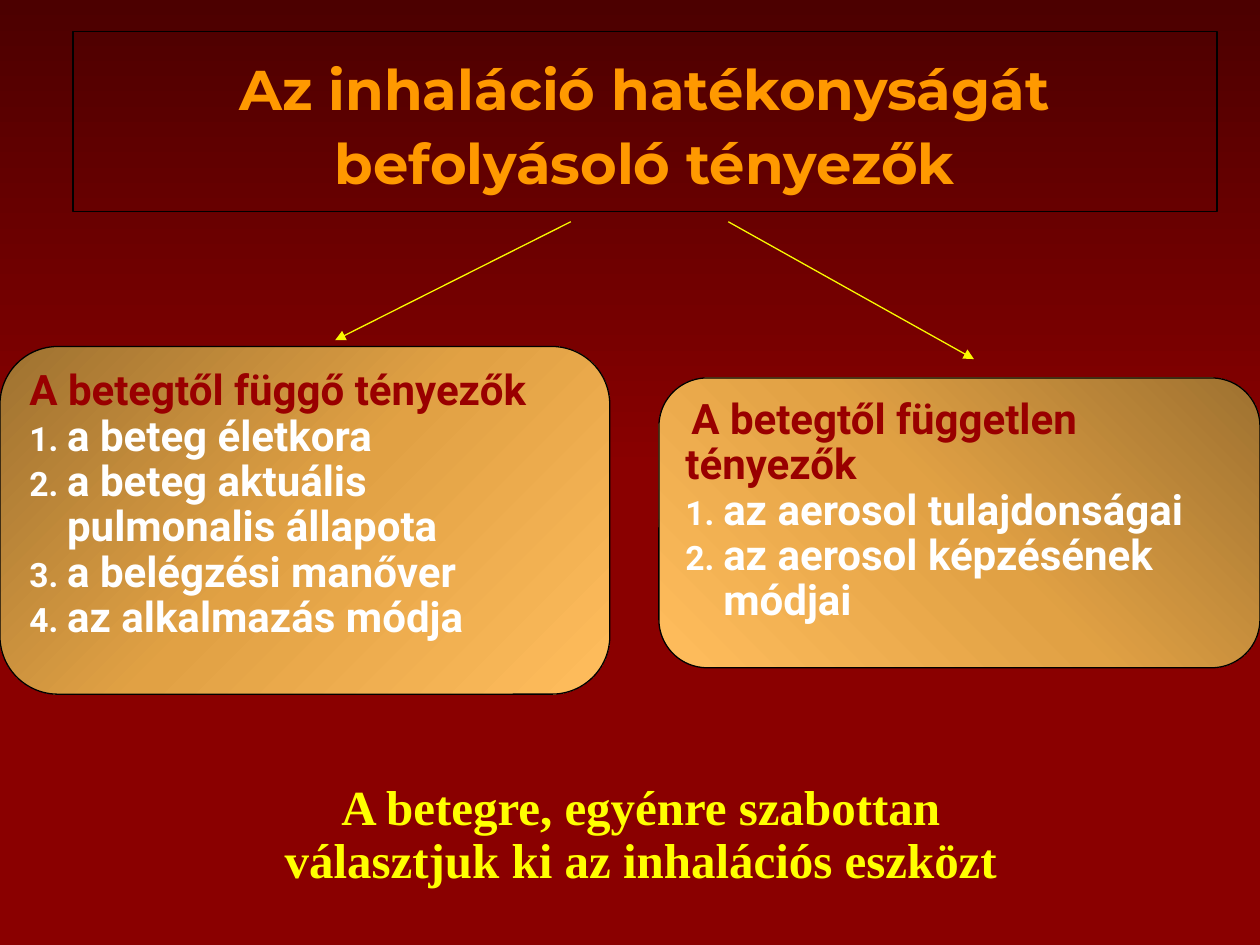
from lxml import etree
from pptx import Presentation
from pptx.dml.color import RGBColor
from pptx.enum.dml import MSO_THEME_COLOR
from pptx.enum.shapes import MSO_CONNECTOR, MSO_SHAPE
from pptx.enum.text import MSO_ANCHOR, MSO_AUTO_SIZE, PP_ALIGN
from pptx.oxml import parse_xml
from pptx.oxml.ns import nsdecls, qn
from pptx.util import Inches, Pt

CENTER, LEFT = PP_ALIGN.CENTER, PP_ALIGN.LEFT
TOP, MIDDLE = MSO_ANCHOR.TOP, MSO_ANCHOR.MIDDLE
NO_FIT, GROW = MSO_AUTO_SIZE.NONE, MSO_AUTO_SIZE.SHAPE_TO_FIT_TEXT
ROUNDED, STRAIGHT = MSO_SHAPE.ROUNDED_RECTANGLE, MSO_CONNECTOR.STRAIGHT

SLIDE_W, SLIDE_H = Inches(10), Inches(7.5)
COLS, ROWS = 100, 75
INDENT = Inches(0.3)
COLORS = {
    "title": "FF9900", "heading": "990000", "item": "FFFFFF",
    "closing": "FFFF00", "arrow": "F9F900", "outline": "000000",
}
BACKDROP = [(0, "4C0000"), (50, "8A0000"), (100, "8A0000")]
GOLD = [(0, "9E7130"), (50, "E1A144"), (100, "FFBD5D")]
DIAGONAL = '<a:lin ang="2700000" scaled="0"/>'
DOWNWARD = '<a:lin ang="5400000" scaled="0"/>'
FROM_TOP_RIGHT = '<a:path path="circle"><a:fillToRect l="100000" b="100000"/></a:path>'


def rgb(name):
    return RGBColor.from_string(COLORS[name])


def grid(col, row):
    return int(SLIDE_W * col / COLS), int(SLIDE_H * row / ROWS)


def box(col, row, cols, rows):
    return grid(col, row) + grid(cols, rows)


def set_gradient(fill, owner, stops, direction):
    fill.gradient()
    old = next(owner.iter(qn("a:gradFill")))
    marks = "".join(
        f'<a:gs pos="{pos * 1000}"><a:srgbClr val="{color}"/></a:gs>'
        for pos, color in stops)
    new = parse_xml(f'<a:gradFill {nsdecls("a")} rotWithShape="1">'
                    f'<a:gsLst>{marks}</a:gsLst>{direction}</a:gradFill>')
    old.getparent().replace(old, new)


def set_outline(s, color="outline"):
    s.line.color.rgb = rgb(color)
    s.line.width = Pt(0.75)


def set_frame(tf, anchor=TOP, fit=NO_FIT):
    tf.word_wrap = True
    tf.auto_size = fit
    tf.vertical_anchor = anchor


def write(p, text, font="Roboto", size=24, color="item", align=LEFT, spacing=0.9):
    p.alignment = align
    p.line_spacing = spacing
    r = p.add_run()
    r.text = text
    r.font.name = font
    r.font.size = Pt(size)
    r.font.bold = True
    r.font.color.rgb = rgb(color)


def number(p):
    pPr = p._p.get_or_add_pPr()
    pPr.set("marL", str(INDENT))
    pPr.set("indent", str(-INDENT))
    color = etree.SubElement(pPr, qn("a:buClr"))
    etree.SubElement(color, qn("a:srgbClr"), val=COLORS["item"])
    etree.SubElement(pPr, qn("a:buSzPct"), val="80000")
    etree.SubElement(pPr, qn("a:buAutoNum"), type="arabicPeriod")


def add_title(slide, text, place):
    s = slide.shapes.title
    s.left, s.top, s.width, s.height = box(*place)
    set_outline(s)
    set_frame(s.text_frame, MIDDLE)
    write(s.text_frame.paragraphs[0], text, font="Montserrat", size=32,
          color="title", align=CENTER, spacing=1.1)


def add_card(slide, place, direction, heading, items, lead=""):
    s = slide.shapes.add_shape(ROUNDED, *box(*place))
    s.shadow.inherit = False
    set_gradient(s.fill, s._element.spPr, GOLD, direction)
    set_outline(s)
    tf = s.text_frame
    set_frame(tf)
    p = tf.paragraphs[0]
    if lead:
        write(p, lead, font="Arial", size=12, color="heading")
    write(p, heading, color="heading")
    for item in items:
        p = tf.add_paragraph()
        write(p, item)
        number(p)


def add_arrow(slide, start, end):
    s = slide.shapes.add_connector(STRAIGHT, *grid(*start), *grid(*end))
    set_outline(s, "arrow")
    etree.SubElement(s.line._get_or_add_ln(), qn("a:tailEnd"), type="triangle")
    etree.SubElement(s._element.spPr, qn("a:effectLst"))


def add_closing(slide, text, place):
    tf = slide.shapes.add_textbox(*box(*place)).text_frame
    set_frame(tf, fit=GROW)
    write(tf.paragraphs[0], text, font="Times New Roman", size=28,
          color="closing", align=CENTER)


def main():
    prs = Presentation()
    prs.slide_width, prs.slide_height = SLIDE_W, SLIDE_H
    slide = prs.slides.add_slide(prs.slide_layouts[5])
    set_gradient(slide.background.fill, slide._element, BACKDROP, DOWNWARD)

    add_title(slide, "Az inhaláció hatékonyságát befolyásoló tényezők",
              (5.8, 2.5, 90.8, 14.3))
    add_card(slide, (0, 27.5, 48.4, 27.6), DIAGONAL, "A betegtől függő tényezők",
             ["a beteg életkora", "a beteg aktuális pulmonalis állapota",
              "a belégzési manőver", "az alkalmazás módja"])
    add_card(slide, (52.3, 30, 47.7, 23), FROM_TOP_RIGHT,
             "A betegtől független tényezők",
             ["az aerosol tulajdonságai", "az aerosol képzésének módjai"], lead=" ")
    add_arrow(slide, (45.3, 17.6), (26.6, 27))
    add_arrow(slide, (57.8, 17.6), (77.3, 28.5))
    add_closing(slide, "A betegre, egyénre szabottan választjuk ki az inhalációs eszközt",
                (17.5, 61.7, 66.7, 9.5))
    prs.save("out.pptx")


if __name__ == "__main__":
    main()
